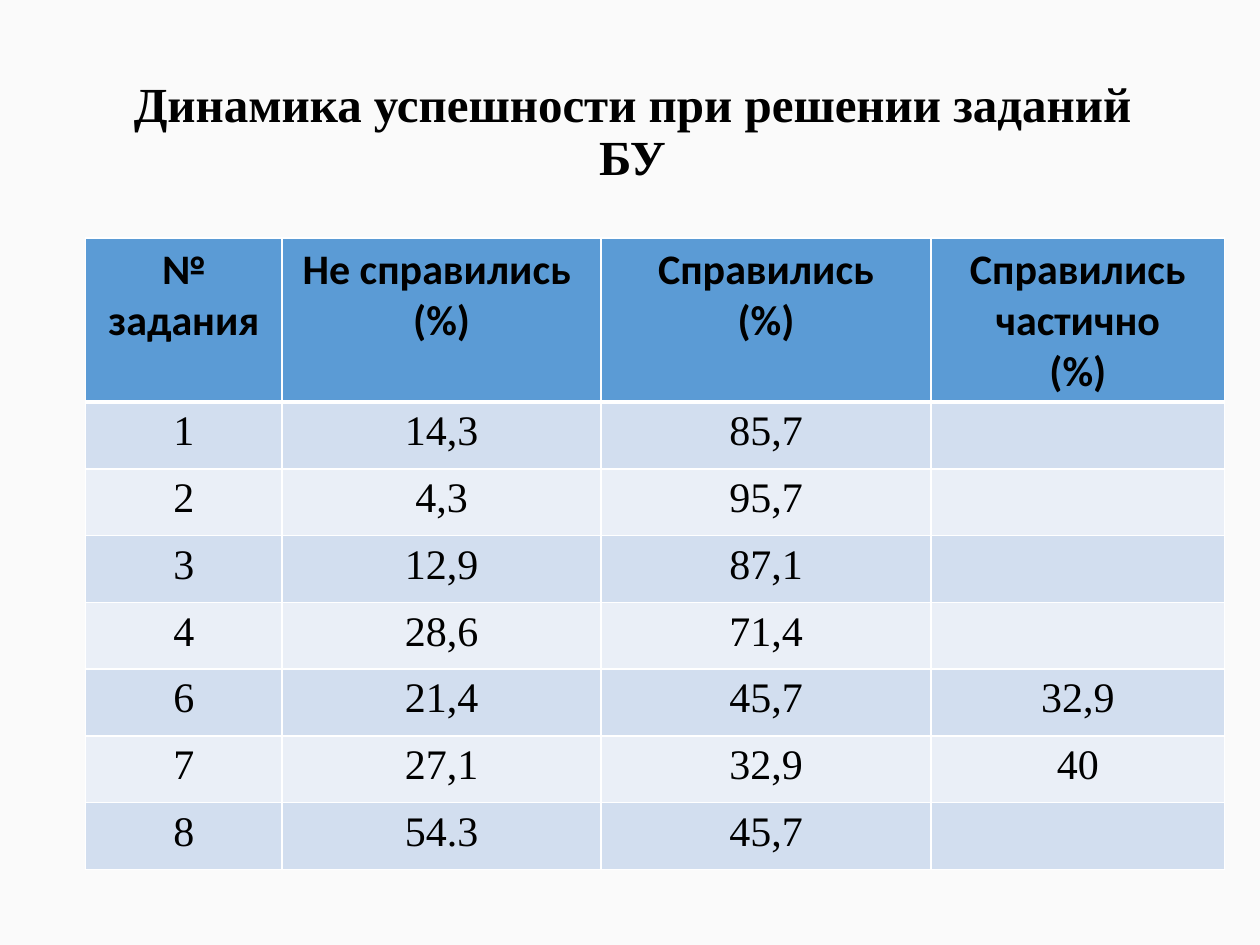
from lxml.etree import SubElement
from pptx import Presentation
from pptx.dml.color import RGBColor
from pptx.enum.text import MSO_ANCHOR as Anchor, PP_ALIGN as Align
from pptx.oxml.ns import qn
from pptx.util import Inches, Pt

BACKGROUND = RGBColor(0xFA, 0xFA, 0xFA)
BLACK = RGBColor(0, 0, 0)
WHITE = RGBColor(0xFF, 0xFF, 0xFF)
HEADER = RGBColor(0x5B, 0x9B, 0xD5)
BANDS = [RGBColor(0xEA, 0xEF, 0xF7), RGBColor(0xD2, 0xDE, 0xEF)]

TITLE_FORMAT = {"name": "Times New Roman", "size": Pt(28), "bold": True}
HEADER_FORMAT = {"name": "Calibri", "size": Pt(24), "bold": True}
BODY_FORMAT = {"name": "Times New Roman", "size": Pt(24), "bold": False}

COLUMN_WIDTHS = [1.56, 2.53, 2.62, 2.33]
ROWS = [
    ["№ задания", "Не справились \n(%)", "Справились\n(%)", "Справились частично\n(%)"],
    ["1", "14,3", "85,7", ""],
    ["2", "4,3", "95,7", ""],
    ["3", "12,9", "87,1", ""],
    ["4", "28,6", "71,4", ""],
    ["6", "21,4", "45,7", "32,9"],
    ["7", "27,1", "32,9", "40"],
    ["8", "54.3", "45,7", ""],
]


def write(frame, text, values):
    frame.text = text
    for para in frame.paragraphs:
        para.alignment = Align.CENTER
        para.font.size = values["size"]
        for span in para.runs:
            span.font.color.rgb = BLACK
            for name, value in values.items():
                setattr(span.font, name, value)


def add_borders(cell, bottom):
    properties = cell._tc.get_or_add_tcPr()
    widths = {"a:lnL": 1, "a:lnR": 1, "a:lnT": 1, "a:lnB": bottom}
    for side, width in widths.items():
        line = SubElement(properties, qn(side), w=str(Pt(width)))
        fill = SubElement(line, qn("a:solidFill"))
        SubElement(fill, qn("a:srgbClr"), val=str(WHITE))


deck = Presentation()
deck.slide_width, deck.slide_height = Inches(10), Inches(7.5)
page = deck.slides.add_slide(deck.slide_layouts[6])
page.background.fill.solid()
page.background.fill.fore_color.rgb = BACKGROUND

title = page.shapes.add_textbox(Inches(0.71), Inches(0.33), Inches(8.62), Inches(1.45))
title.text_frame.word_wrap = True
title.text_frame.vertical_anchor = Anchor.MIDDLE
write(title.text_frame, "Динамика успешности при решении заданий БУ", TITLE_FORMAT)
title.text_frame.paragraphs[0].line_spacing = 0.9

table = page.shapes.add_table(
    len(ROWS), len(COLUMN_WIDTHS), Inches(0.68), Inches(1.89), Inches(9.05), Inches(4.85)
).table
for column, width in zip(table.columns, COLUMN_WIDTHS):
    column.width = Inches(width)

for index, texts in enumerate(ROWS):
    is_header = index == 0
    table.rows[index].height = Inches(1.14 if is_header else 0.53)
    for cell, text in zip(table.rows[index].cells, texts):
        write(cell.text_frame, text, HEADER_FORMAT if is_header else BODY_FORMAT)
        add_borders(cell, 3 if is_header else 1)
        if index == 1:
            cell._tc.tcPr.find(qn("a:lnT")).set("w", str(Pt(3)))
        cell.fill.solid()
        cell.fill.fore_color.rgb = HEADER if is_header else BANDS[index % 2]

deck.save("out.pptx")
